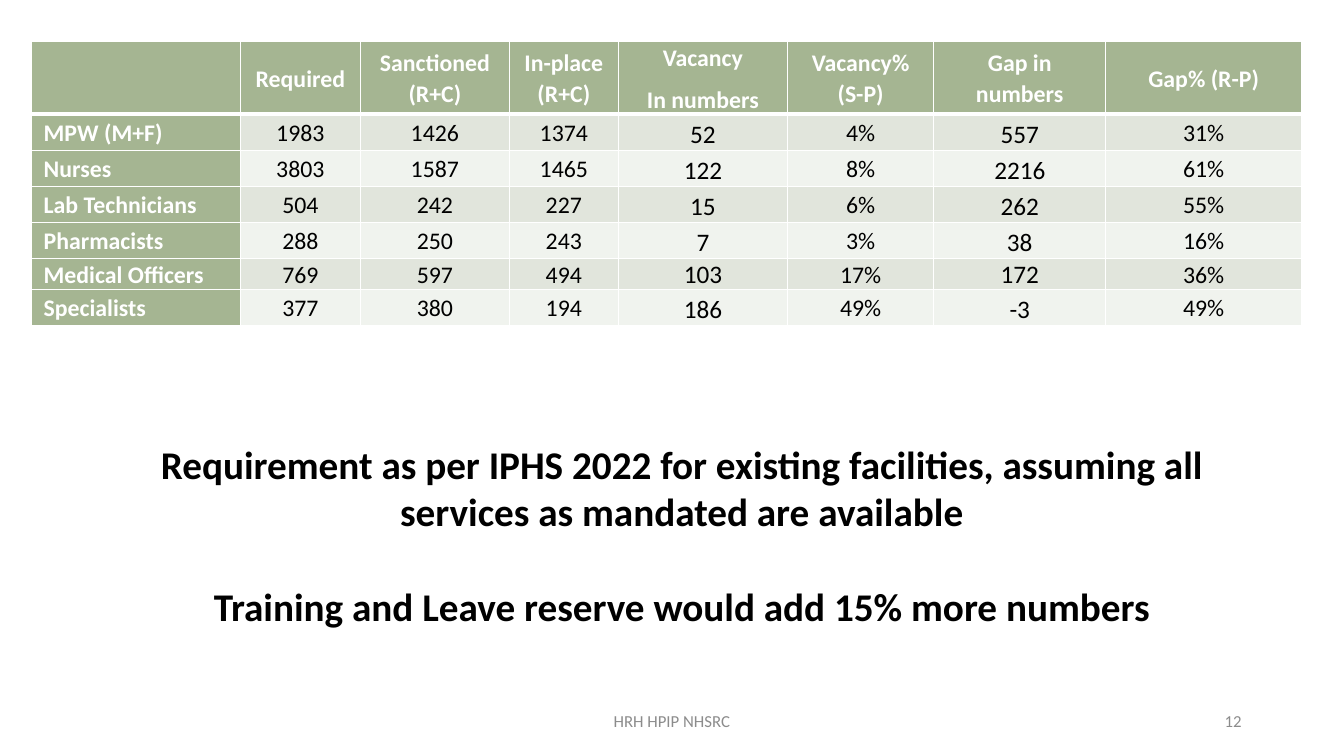
import pptx
import pptx.util
import pptx.dml.color
import pptx.enum.text
import pptx.oxml
import pptx.oxml.ns

Cm = pptx.util.Cm
Pt = pptx.util.Pt
Align = pptx.enum.text.PP_ALIGN
Anchor = pptx.enum.text.MSO_ANCHOR

HEADER = ["", "Required", "Sanctioned (R+C)", "In-place (R+C)", "Vacancy\nIn numbers",
          "Vacancy% (S-P)", "Gap in numbers", "Gap% (R-P)"]
STAFF = [
    ["MPW (M+F)", "1983", "1426", "1374", "52", "4%", "557", "31%"],
    ["Nurses", "3803", "1587", "1465", "122", "8%", "2216", "61%"],
    ["Lab Technicians", "504", "242", "227", "15", "6%", "262", "55%"],
    ["Pharmacists", "288", "250", "243", "7", "3%", "38", "16%"],
    ["Medical Officers", "769", "597", "494", "103", "17%", "172", "36%"],
    ["Specialists", "377", "380", "194", "186", "49%", "-3", "49%"],
]
COLUMN_WIDTHS = [5.26, 3.02, 3.76, 2.74, 4.27, 3.68, 4.34, 4.93]
ROW_HEIGHTS = [1.65, 0.91, 0.91, 0.91, 0.91, 0.66, 0.91]
COUNT_COLUMNS = (4, 6)


def color(value):
    return pptx.dml.color.RGBColor.from_string(value)


class Sheet:
    font = "Calibri"
    black, white, gray = "000000", "FFFFFF", "8C8C8C"
    green, bands = "A5B592", ("E1E5DC", "F0F3EE")

    def __init__(self, deck):
        self.page = deck.slides.add_slide(deck.slide_layouts[6])

    def fill_text(self, frame, text, size, shade, bold=False, align=Align.CENTER,
                  after=0, spacing=None):
        frame.word_wrap = True
        frame.text = text
        for para in frame.paragraphs:
            para.alignment = align
            para.space_after = Pt(after)
            para.line_spacing = spacing
            para.font.name = self.font
            para.font.size = Pt(size)
            para.font.bold = bold
            para.font.color.rgb = color(shade)

    def text(self, left, top, width, height, text, size, shade,
             anchor=Anchor.TOP, **style):
        box = self.page.shapes.add_textbox(Cm(left), Cm(top), Cm(width), Cm(height))
        box.text_frame.vertical_anchor = anchor
        self.fill_text(box.text_frame, text, size, shade, **style)

    def borders(self, cell, top, bottom):
        properties = cell._tc.get_or_add_tcPr()
        for side, points in (("L", 1), ("R", 1), ("T", top), ("B", bottom)):
            properties.append(pptx.oxml.parse_xml(
                f'<a:ln{side} {pptx.oxml.ns.nsdecls("a")} w="{Pt(points)}">'
                f'<a:solidFill><a:srgbClr val="{self.white}"/></a:solidFill></a:ln{side}>'))

    def cell(self, cell, text, row, column):
        heading = row == 0 or column == 0
        count = column in COUNT_COLUMNS and not heading
        self.borders(cell, 3 if row == 1 else 1, 3 if row == 0 else 1)
        cell.fill.solid()
        cell.fill.fore_color.rgb = color(self.green if heading else self.bands[(row - 1) % 2])
        cell.margin_left = cell.margin_right = Cm(0.02 if count else 0.3)
        cell.margin_top = Cm(0.02 if count else 0)
        cell.margin_bottom = Cm(0)
        cell.vertical_anchor = Anchor.BOTTOM if count else Anchor.MIDDLE
        self.fill_text(cell.text_frame, text, 18 if count else 17,
                       self.white if heading else self.black, bold=heading,
                       align=Align.LEFT if column == 0 else Align.CENTER,
                       after=0 if count else 8, spacing=None if count else 1.07)

    def table(self, left, top, rows, widths, heights):
        table = self.page.shapes.add_table(
            len(rows), len(widths), Cm(left), Cm(top),
            Cm(sum(widths)), Cm(sum(heights))).table
        table.horz_banding = False
        for column, width in zip(table.columns, widths):
            column.width = Cm(width)
        for line, height in zip(table.rows, heights):
            line.height = Cm(height)
        for row, values in enumerate(rows):
            for column, value in enumerate(values):
                self.cell(table.cell(row, column), value, row, column)


def main():
    deck = pptx.Presentation()
    deck.slide_width, deck.slide_height = Cm(33.87), Cm(19.05)
    sheet = Sheet(deck)
    sheet.text(11.22, 17.66, 11.43, 1.01, "HRH HPIP NHSRC", 12, sheet.gray,
               anchor=Anchor.MIDDLE, after=6)
    sheet.text(23.92, 17.66, 7.62, 1.01, "12", 12, sheet.gray,
               anchor=Anchor.MIDDLE, align=Align.RIGHT, after=6)
    sheet.table(0.8, 1.05, [HEADER] + STAFF, COLUMN_WIDTHS, ROW_HEIGHTS)
    sheet.text(2.18, 10.97, 30, 5.05,
               "Requirement as per IPHS 2022 for existing facilities, assuming all "
               "services as mandated are available\n"
               "Training and Leave reserve would add 15% more numbers",
               28, sheet.black, bold=True, after=34)
    deck.save("out.pptx")


if __name__ == "__main__":
    main()
